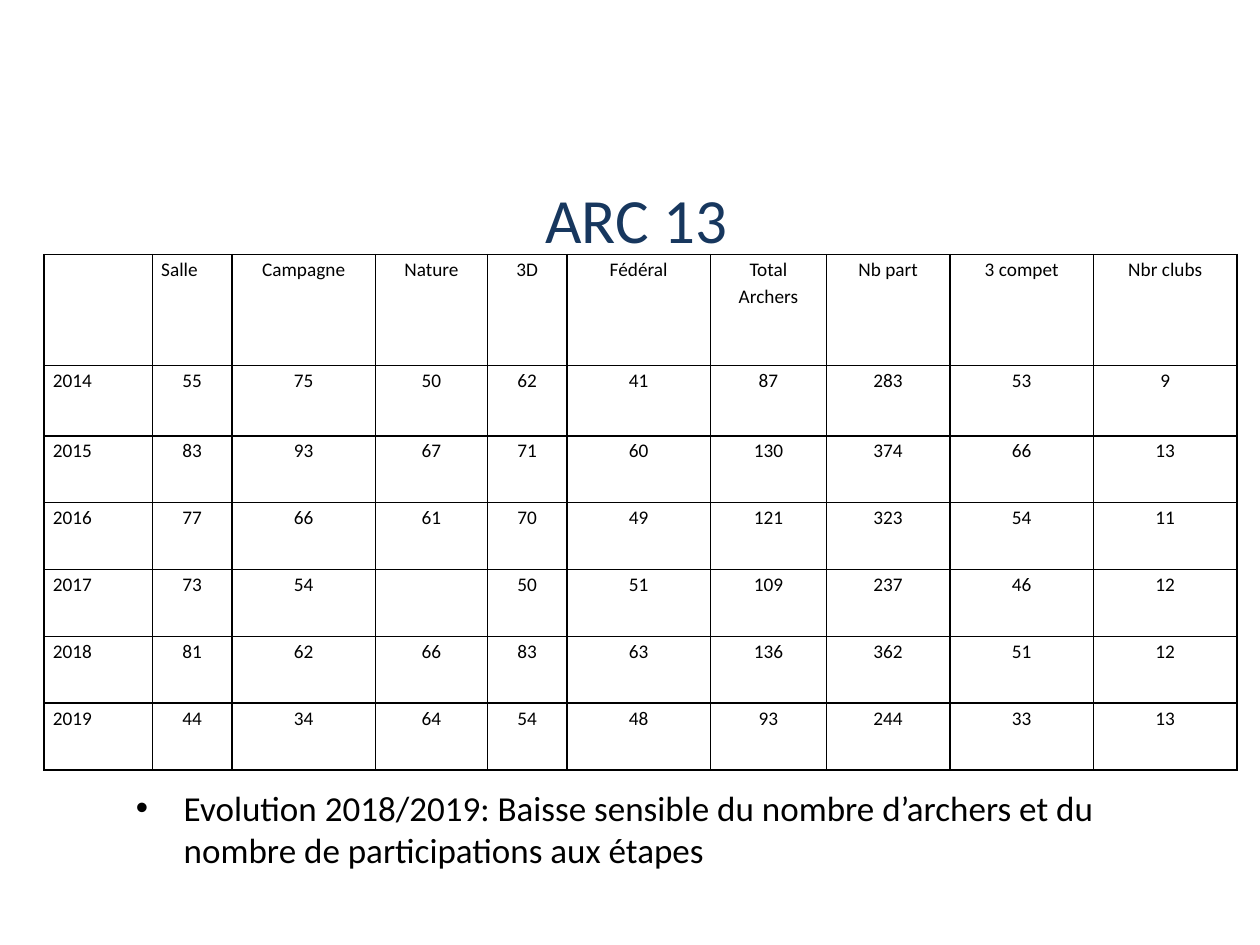
"""Build the ARC 13 slide with its yearly table of archers."""
import lxml.etree
import pptx
import pptx.dml.color
import pptx.enum.text
import pptx.oxml.ns
import pptx.util

Inches = pptx.util.Inches
Pt = pptx.util.Pt
align = pptx.enum.text.PP_ALIGN
qn = pptx.oxml.ns.qn
hues = {"ink": "000000", "title": "17375E"}


def style(para, size, hue):
    for run in para.runs:
        run.font.name = "Calibri"
        run.font.size = Pt(size)
        run.font.color.rgb = pptx.dml.color.RGBColor.from_string(hues[hue])


def border(cell):
    props = cell._tc.get_or_add_tcPr()
    for spot, side in enumerate(("lnL", "lnR", "lnT", "lnB")):
        line = lxml.etree.Element(qn("a:" + side), w=str(Pt(1)))
        fill = lxml.etree.SubElement(line, qn("a:solidFill"))
        lxml.etree.SubElement(fill, qn("a:srgbClr"), val=hues["ink"])
        props.insert(spot, line)


deck = pptx.Presentation()
deck.slide_width = Inches(10)
deck.slide_height = Inches(7.5)
slide = deck.slides.add_slide(deck.slide_layouts[6])

title = slide.shapes.add_textbox(Inches(0), Inches(0.99), Inches(10), Inches(1.18))
frame = title.text_frame
frame.word_wrap = True
frame.margin_top = Inches(0.44)
frame.margin_left = Inches(0.2)
frame.text = "ARC 13"
para = frame.paragraphs[0]
para.alignment = align.CENTER
style(para, 36, "title")

note = slide.shapes.add_textbox(Inches(0.98), Inches(6.19), Inches(8.35), Inches(1.09))
frame = note.text_frame
frame.word_wrap = True
frame.text = (
    "Evolution 2018/2019: Baisse sensible du nombre d’archers et du "
    "nombre de participations aux étapes"
)
para = frame.paragraphs[0]
props = para._p.get_or_add_pPr()
props.set("marL", str(Inches(0.38)))
props.set("indent", str(Inches(-0.38)))
lxml.etree.SubElement(props, qn("a:buFont"), typeface="Arial")
lxml.etree.SubElement(props, qn("a:buChar"), char="•")
style(para, 20, "ink")

rows = [
    ["", "Salle", "Campagne", "Nature", "3D", "Fédéral", "Total Archers",
     "Nb part", "3 compet", "Nbr clubs"],
    [2014, 55, 75, 50, 62, 41, 87, 283, 53, 9],
    [2015, 83, 93, 67, 71, 60, 130, 374, 66, 13],
    [2016, 77, 66, 61, 70, 49, 121, 323, 54, 11],
    [2017, 73, 54, "", 50, 51, 109, 237, 46, 12],
    [2018, 81, 62, 66, 83, 63, 136, 362, 51, 12],
    [2019, 44, 34, 64, 54, 48, 93, 244, 33, 13],
]
widths = [0.86, 0.63, 1.14, 0.89, 0.63, 1.14, 0.92, 0.98, 1.14, 1.14]
heights = [0.88, 0.56] + [0.53] * 5

table = slide.shapes.add_table(
    len(rows), len(widths), Inches(0.35), Inches(2.02), Inches(9.49), Inches(4.09)
).table
table.first_row = False
table.horz_banding = False
for col, width in zip(table.columns, widths):
    col.width = Inches(width)
for row, height in zip(table.rows, heights):
    row.height = Inches(height)

for r, row in enumerate(rows):
    for c, value in enumerate(row):
        cell = table.cell(r, c)
        cell.fill.background()
        border(cell)
        cell.margin_left = cell.margin_right = Inches(0.07)
        cell.margin_top = cell.margin_bottom = 0
        cell.text_frame.text = str(value)
        para = cell.text_frame.paragraphs[0]
        para.line_spacing = 1.15
        left = c == 0 or (r, c) == (0, 1)
        para.alignment = align.LEFT if left else align.CENTER
        style(para, 11, "ink")

deck.save("out.pptx")
